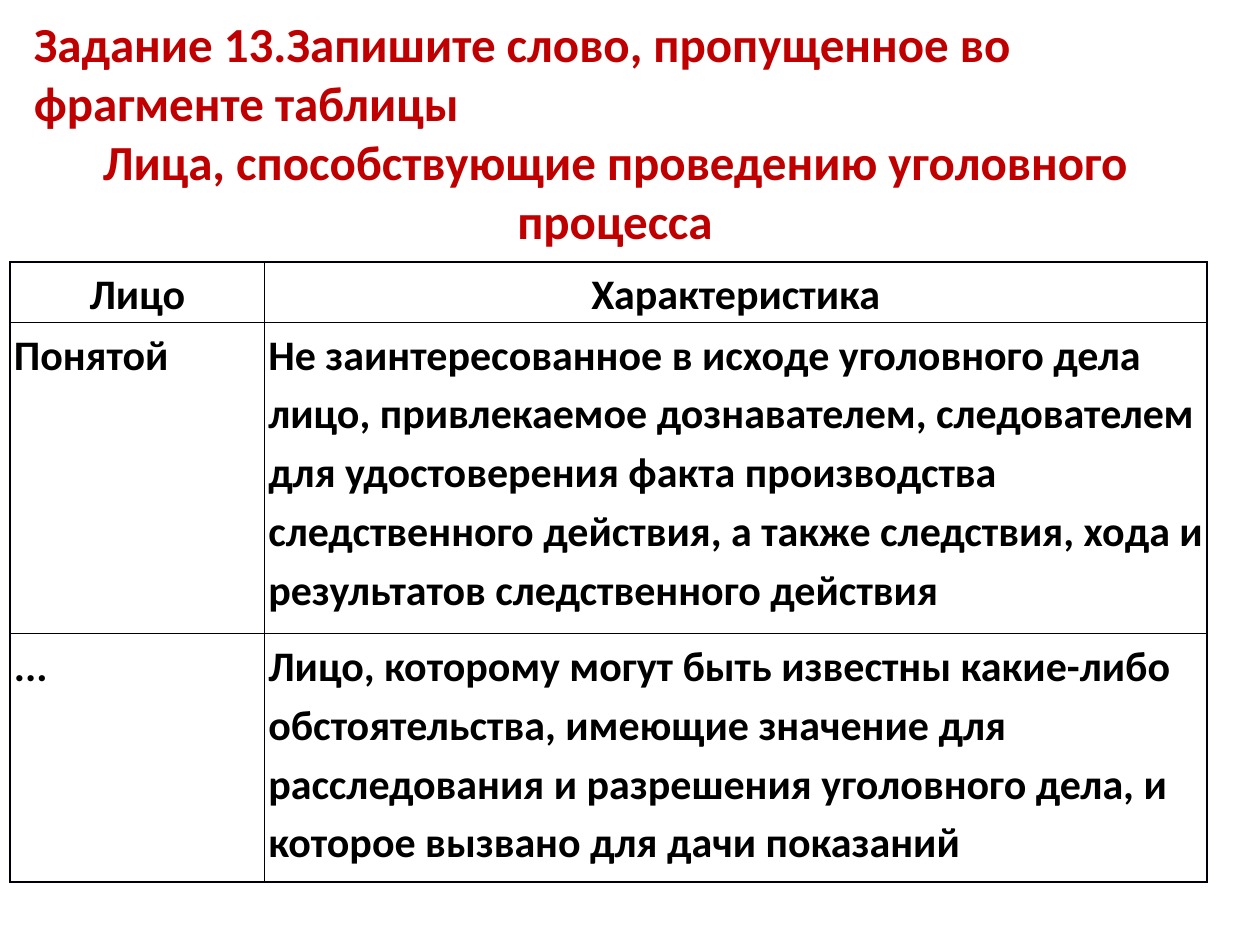
"""Build the slide with a task heading and a two-column table of persons."""
from lxml.etree import SubElement
from pptx import Presentation
from pptx.dml.color import RGBColor
from pptx.enum.text import MSO_ANCHOR, PP_ALIGN
from pptx.oxml.ns import qn
from pptx.util import Inches, Pt

COLORS = {"heading": "C00000", "text": "000000", "border": "00000A"}
HEADING = [
    ("Задание 13.Запишите слово, пропущенное во фрагменте таблицы", PP_ALIGN.LEFT),
    ("Лица, способствующие проведению уголовного процесса", PP_ALIGN.CENTER),
]
ROWS = [
    ("Лицо", "Характеристика"),
    ("Понятой", "Не заинтересованное в исходе уголовного дела лицо, привлекаемое "
     "дознавателем, следователем для удостоверения факта производства следственного "
     "действия, а также следствия, хода и результатов следственного действия"),
    ("...", "Лицо, которому могут быть известны какие-либо обстоятельства, имеющие "
     "значение для расследования и разрешения уголовного дела, и которое вызвано "
     "для дачи показаний"),
]
COLUMN_WIDTHS = [2.02, 7.48]
ROW_HEIGHTS = [0.48, 2.47, 1.97]


def style_paragraph(para, size, color, align):
    para.alignment = align
    para.font.name = "Calibri"
    para.font.size = Pt(size)
    para.font.bold = True
    para.font.color.rgb = RGBColor.from_string(COLORS[color])


def add_borders(cell):
    properties = cell._tc.get_or_add_tcPr()
    for index, side in enumerate(("lnL", "lnR", "lnT", "lnB")):
        line = properties.makeelement(qn(f"a:{side}"), {"w": str(Pt(1))})
        fill = SubElement(line, qn("a:solidFill"))
        SubElement(fill, qn("a:srgbClr"), val=COLORS["border"])
        properties.insert(index, line)


deck = Presentation()
deck.slide_width, deck.slide_height = Inches(10), Inches(7.5)
page = deck.slides.add_slide(deck.slide_layouts[6])

table = page.shapes.add_table(
    len(ROWS), len(COLUMN_WIDTHS), Inches(0.08), Inches(2.08),
    Inches(sum(COLUMN_WIDTHS)), Inches(sum(ROW_HEIGHTS))).table
table.horz_banding = False
for column, width in zip(table.columns, COLUMN_WIDTHS):
    column.width = Inches(width)
for row_index, (row, height, texts) in enumerate(zip(table.rows, ROW_HEIGHTS, ROWS)):
    row.height = Inches(height)
    for cell, text in zip(row.cells, texts):
        cell.margin_left = cell.margin_right = Inches(0.03)
        cell.margin_top = cell.margin_bottom = 0
        cell.fill.background()
        add_borders(cell)
        para = cell.text_frame.paragraphs[0]
        para.text = text
        para.line_spacing = 1.15
        para.space_after = Pt(10)
        style_paragraph(para, 24, "text", PP_ALIGN.LEFT if row_index else PP_ALIGN.CENTER)

box = page.shapes.add_textbox(Inches(0.17), Inches(0.06), Inches(9.42), Inches(2.46))
frame = box.text_frame
frame.word_wrap = True
frame.vertical_anchor = MSO_ANCHOR.TOP
for index, (text, align) in enumerate(HEADING):
    para = frame.add_paragraph() if index else frame.paragraphs[0]
    para.text = text
    style_paragraph(para, 28, "heading", align)

deck.save("out.pptx")
